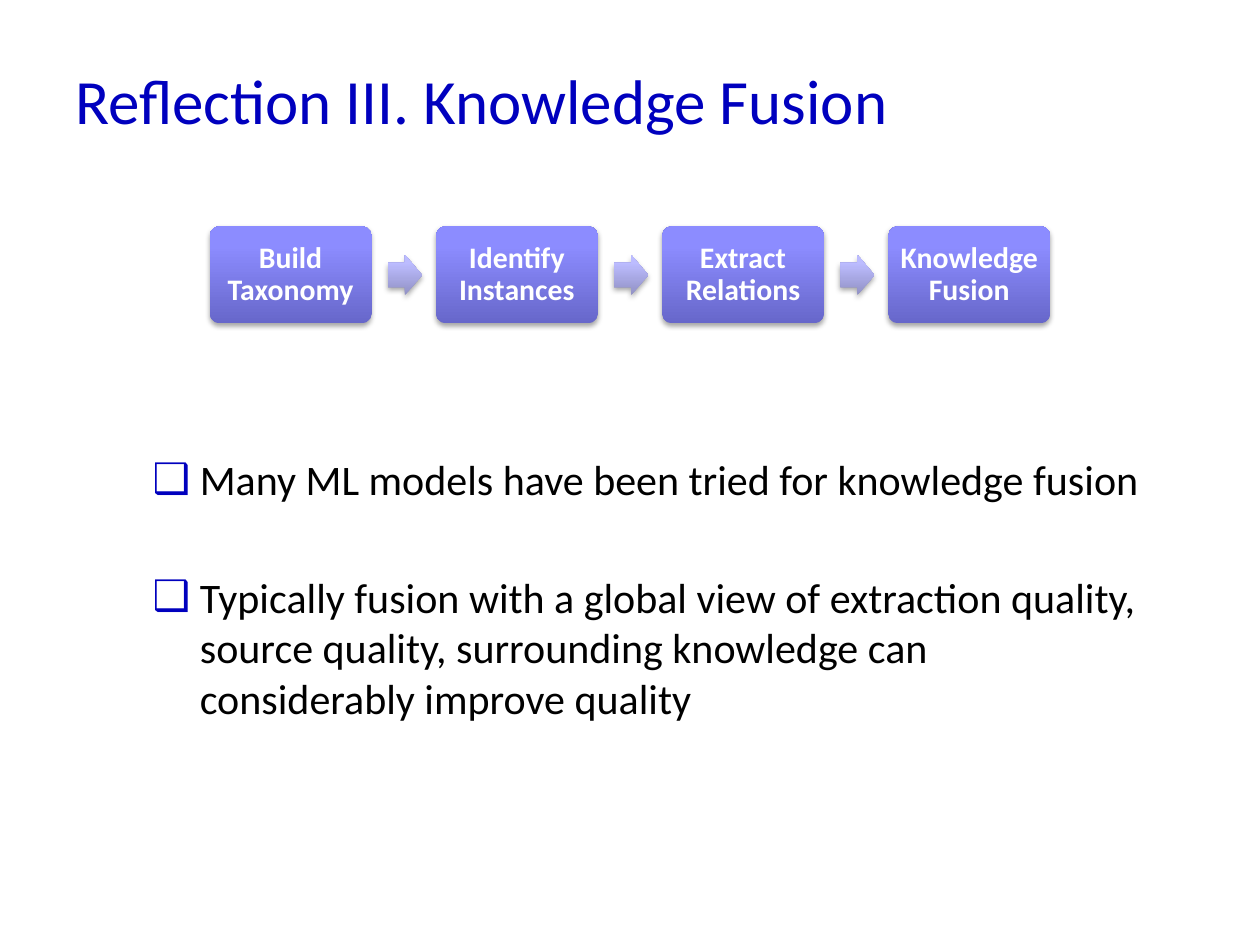
from copy import deepcopy

from lxml import etree
from pptx import Presentation
from pptx.dml.color import RGBColor
from pptx.enum import shapes, text
from pptx.oxml import ns
from pptx.util import Cm, Pt

FONT = "Calibri"
BLUE = RGBColor(0x00, 0x00, 0xBE)
BLACK = RGBColor(0x00, 0x00, 0x00)
WHITE = RGBColor(0xFF, 0xFF, 0xFF)
# Gradients run from bottom to top
STOPS = (0, 0.8, 1)
STEP_COLORS = (RGBColor(0x67, 0x67, 0xCA), RGBColor(0x8C, 0x8C, 0xFF),
               RGBColor(0x8E, 0x8E, 0xFF))
ARROW_COLORS = (RGBColor(0x91, 0x91, 0xC4), RGBColor(0xBC, 0xBC, 0xFF),
                RGBColor(0xBE, 0xBE, 0xFF))

STEPS = ("Build Taxonomy", "Identify Instances", "Extract Relations", "Knowledge Fusion")
POINTS = (
    ("Many ML models have been tried for knowledge fusion", 4.8),
    ("Typically fusion with a global view of extraction quality, source quality, "
     "surrounding knowledge can considerably improve quality", 38.5),
)


def style(p, size, color, bold=False):
    p.font.name = FONT
    p.font.size = Pt(size)
    p.font.color.rgb = color
    p.font.bold = bold


def add_child(parent, tag, **attrs):
    return etree.SubElement(parent, ns.qn(tag), attrs)


def add_shadow(sp):
    sp.shadow.inherit = False
    effects = sp.element.spPr.find(ns.qn("a:effectLst"))
    shadow = add_child(effects, "a:outerShdw", blurRad=str(Pt(3.1)), dist=str(Pt(1.8)),
                       dir="5400000", rotWithShape="0")
    color = add_child(shadow, "a:srgbClr", val="000000")
    add_child(color, "a:alpha", val="35000")


def add_gradient_shape(s, kind, box, adjustments, colors):
    sp = s.shapes.add_shape(kind, *map(Cm, box))
    for i, value in enumerate(adjustments):
        sp.adjustments[i] = value
    sp.fill.gradient()
    sp.fill.gradient_angle = 90
    stop_list = sp.element.spPr.find(".//" + ns.qn("a:gsLst"))
    stop_list.append(deepcopy(stop_list[-1]))
    for stop, position, color in zip(sp.fill.gradient_stops, STOPS, colors):
        stop.position = position
        stop.color.rgb = color
    sp.line.fill.background()
    add_shadow(sp)
    return sp


def add_step(s, left, label):
    sp = add_gradient_shape(s, shapes.MSO_SHAPE.ROUNDED_RECTANGLE,
                            (left, 4.56, 3.26, 1.96), (0.1,), STEP_COLORS)
    tf = sp.text_frame
    tf.word_wrap = True
    tf.vertical_anchor = text.MSO_ANCHOR.MIDDLE
    tf.margin_left = tf.margin_right = Cm(0.1)
    tf.margin_top = tf.margin_bottom = Cm(0.22)
    p = tf.paragraphs[0]
    p.text = label
    p.alignment = text.PP_ALIGN.CENTER
    p.line_spacing = 0.9
    style(p, 17, WHITE, bold=True)


def add_process(s):
    left, pitch, arrow_offset = 4.23, 4.56, 3.59
    for i, label in enumerate(STEPS):
        x = left + i * pitch
        add_step(s, x, label)
        if i < len(STEPS) - 1:
            add_gradient_shape(s, shapes.MSO_SHAPE.RIGHT_ARROW,
                               (x + arrow_offset, 5.14, 0.69, 0.81),
                               (0.6, 0.5), ARROW_COLORS)


def add_text_box(s, box):
    tf = s.shapes.add_textbox(*map(Cm, box)).text_frame
    tf.word_wrap = True
    return tf


def add_title(s, title):
    tf = add_text_box(s, (1.27, 0.84, 24.13, 2.34))
    tf.vertical_anchor = text.MSO_ANCHOR.MIDDLE
    p = tf.paragraphs[0]
    p.text = title
    style(p, 36, BLUE)


def add_bullet(p):
    pPr = p._p.get_or_add_pPr()
    indent = Cm(0.95)
    pPr.set("marL", str(indent))
    pPr.set("indent", str(-indent))
    color = etree.Element(ns.qn("a:buClr"))
    add_child(color, "a:srgbClr", val=str(BLUE))
    font = etree.Element(ns.qn("a:buFont"), typeface=FONT)
    bullet = etree.Element(ns.qn("a:buChar"), char="❑")
    # Bullet properties stand before the default run properties
    for element in (color, font, bullet):
        pPr.find(ns.qn("a:defRPr")).addprevious(element)


def add_points(s):
    tf = add_text_box(s, (2.83, 9.02, 20.5, 6.07))
    for i, (point, space_before) in enumerate(POINTS):
        p = tf.add_paragraph() if i else tf.paragraphs[0]
        p.text = point
        p.space_before = Pt(space_before)
        style(p, 24, BLACK)
        add_bullet(p)


def main():
    prs = Presentation()
    prs.slide_width, prs.slide_height = Cm(25.4), Cm(19.05)
    s = prs.slides.add_slide(prs.slide_layouts[6])
    add_title(s, "Reflection III. Knowledge Fusion")
    add_process(s)
    add_points(s)
    prs.save("out.pptx")


if __name__ == "__main__":
    main()
